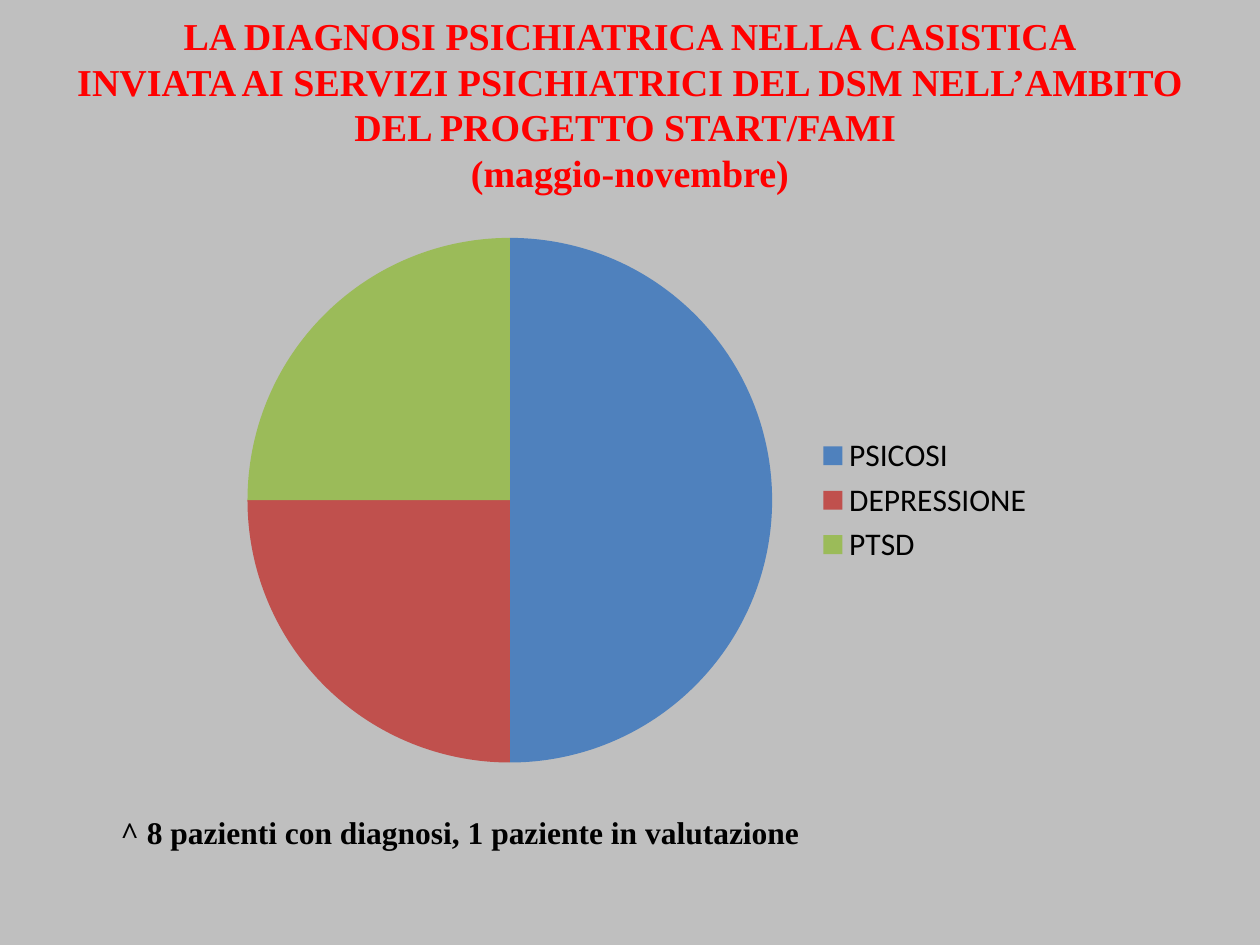
from pptx import Presentation
from pptx.chart.data import CategoryChartData as ChartData
from pptx.dml.color import RGBColor
from pptx.enum.chart import XL_CHART_TYPE as Kind, XL_LEGEND_POSITION as Side
from pptx.enum.text import MSO_ANCHOR as Anchor, PP_ALIGN as Align
from pptx.util import Inches, Pt

GREY = RGBColor(0xBF, 0xBF, 0xBF)
RED = RGBColor(0xFF, 0x00, 0x00)
BLACK = RGBColor(0x00, 0x00, 0x00)
BLUE = RGBColor(0x4F, 0x81, 0xBD)
BRICK = RGBColor(0xC0, 0x50, 0x4D)
GREEN = RGBColor(0x9B, 0xBB, 0x59)

TITLE = (
    "LA DIAGNOSI PSICHIATRICA NELLA CASISTICA\v"
    "INVIATA AI SERVIZI PSICHIATRICI DEL DSM NELL’AMBITO "
    "DEL PROGETTO START/FAMI \v"
    "(maggio-novembre)"
)
NOTE = "^ 8 pazienti con diagnosi, 1 paziente in valutazione"
CASES = [("PSICOSI", 50, BLUE), ("DEPRESSIONE", 25, BRICK), ("PTSD", 25, GREEN)]


def add_text(slide, box, text, size, color):
    """Place bold serif text in the box and return its frame."""
    frame = slide.shapes.add_textbox(*map(Inches, box)).text_frame
    frame.text = text
    for run in frame.paragraphs[0].runs:
        font = run.font
        font.name, font.size, font.bold = "Times New Roman", Pt(size), True
        font.color.rgb = color
    return frame


def add_title(slide, box):
    """Place the centred red heading in the box."""
    frame = add_text(slide, box, TITLE, 21.7, RED)
    frame.word_wrap = True
    frame.margin_left = frame.margin_right = Inches(0.05)
    frame.vertical_anchor = Anchor.MIDDLE
    frame.paragraphs[0].alignment = Align.CENTER
    frame.paragraphs[0].line_spacing = Pt(26)


def add_pie(slide, box):
    """Place the pie of diagnoses with its legend in the box."""
    names, shares, colors = zip(*CASES)
    data = ChartData()
    data.categories = names
    data.add_series("Series 1", shares)
    chart = slide.shapes.add_chart(Kind.PIE, *map(Inches, box), data).chart
    chart.has_title = False
    chart.font.name, chart.font.size = "Calibri", Pt(18)
    chart.font.color.rgb = BLACK
    chart.has_legend = True
    chart.legend.position = Side.RIGHT
    chart.legend.include_in_layout = False
    plot = chart.plots[0]
    plot.vary_by_categories = True
    for index, color in enumerate(colors):
        fill = plot.series[0].points[index].format.fill
        fill.solid()
        fill.fore_color.rgb = color


def add_note(slide, box):
    """Place the patient count on one line in the box."""
    add_text(slide, box, NOTE, 18, BLACK).word_wrap = False


def main():
    """Build the slide and save it."""
    deck = Presentation()
    deck.slide_width, deck.slide_height = Inches(10), Inches(7.5)
    slide = deck.slides.add_slide(deck.slide_layouts[6])
    back = slide.background.fill
    back.solid()
    back.fore_color.rgb = GREY
    add_title(slide, (0.5, 0.04, 9, 1.57))
    add_pie(slide, (1.64, 1.75, 6.67, 4.44))
    add_note(slide, (0.86, 6.4, 5.64, 0.4))
    deck.save("out.pptx")


if __name__ == "__main__":
    main()
